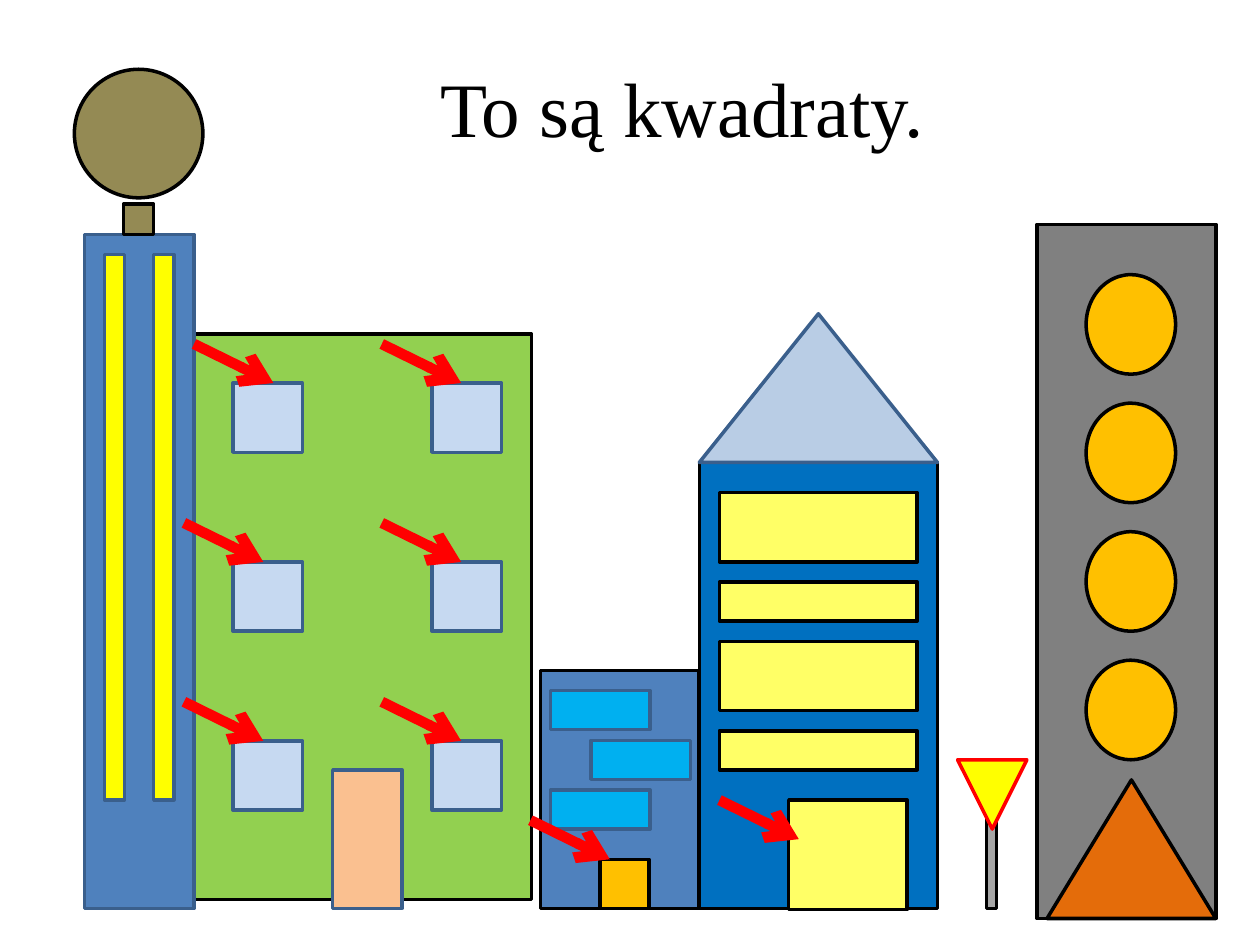
from dataclasses import dataclass

from lxml.etree import SubElement
from pptx import Presentation
from pptx.dml.color import RGBColor
from pptx.enum.shapes import MSO_CONNECTOR, MSO_SHAPE
from pptx.enum.text import MSO_ANCHOR, PP_ALIGN
from pptx.oxml.ns import qn
from pptx.util import Inches, Pt

RECT = MSO_SHAPE.RECTANGLE
OVAL = MSO_SHAPE.OVAL
TRIANGLE = MSO_SHAPE.ISOSCELES_TRIANGLE


@dataclass(frozen=True)
class Theme:
    font: str = "Times New Roman"
    title_size: int = 44
    outline_width: int = 2
    arrow_width: int = 6
    black: str = "000000"
    navy: str = "3A5F8C"
    red: str = "FF0000"
    green: str = "92D050"
    blue: str = "0070C0"
    steel: str = "4F81BD"
    cyan: str = "00B0F0"
    glass: str = "C6D9F1"
    roof: str = "B9CDE5"
    peach: str = "FAC090"
    cream: str = "FFFF66"
    yellow: str = "FFFF00"
    amber: str = "FFC000"
    orange: str = "E46C0A"
    olive: str = "948A54"
    gray: str = "808080"
    light_gray: str = "A6A6A6"


class Street:
    """Draws on one slide with one theme; lengths are in inches."""

    def __init__(self, slide, theme):
        self.slide = slide
        self.theme = theme

    def title(self, text, left, top, width, height):
        box = self.slide.shapes.title
        box.left, box.top = Inches(left), Inches(top)
        box.width, box.height = Inches(width), Inches(height)
        frame = box.text_frame
        frame.text = text
        frame.vertical_anchor = MSO_ANCHOR.MIDDLE
        para = frame.paragraphs[0]
        para.alignment = PP_ALIGN.CENTER
        font = para.runs[0].font
        font.name = self.theme.font
        font.size = Pt(self.theme.title_size)
        font.color.rgb = RGBColor.from_string(self.theme.black)

    def shape(self, kind, left, top, width, height, fill, outline):
        shape = self.slide.shapes.add_shape(
            kind, Inches(left), Inches(top), Inches(width), Inches(height))
        shape.shadow.inherit = False
        shape.fill.solid()
        shape.fill.fore_color.rgb = RGBColor.from_string(fill)
        shape.line.color.rgb = RGBColor.from_string(outline)
        shape.line.width = Pt(self.theme.outline_width)
        return shape

    def arrow(self, left, top):
        """Short slanted arrow; every arrow has the same length and slope."""
        arrow = self.slide.shapes.add_connector(
            MSO_CONNECTOR.STRAIGHT, Inches(left), Inches(top),
            Inches(left + 0.63), Inches(top + 0.31))
        arrow.line.color.rgb = RGBColor.from_string(self.theme.red)
        arrow.line.width = Pt(self.theme.arrow_width)
        SubElement(arrow.line._get_or_add_ln(), qn("a:tailEnd"), type="arrow")
        SubElement(arrow._element.spPr, qn("a:effectLst"))


def draw_green_block(street):
    theme = street.theme
    street.shape(RECT, 1.46, 2.65, 2.76, 4.49, theme.green, theme.black)
    for row in range(3):
        for left in (1.85, 3.43):
            street.shape(RECT, left, 3.04 + 1.42 * row, 0.55, 0.55, theme.glass, theme.navy)
    street.shape(RECT, 2.64, 6.11, 0.55, 1.1, theme.peach, theme.navy)


def draw_blue_house(street):
    theme = street.theme
    street.shape(RECT, 5.55, 3.67, 1.89, 3.54, theme.blue, theme.black)
    street.shape(TRIANGLE, 5.55, 2.49, 1.89, 1.18, theme.roof, theme.navy)
    for top in (3.91, 5.09):
        street.shape(RECT, 5.71, top, 1.57, 0.55, theme.cream, theme.black)
        street.shape(RECT, 5.71, top + 0.71, 1.57, 0.31, theme.cream, theme.black)
    street.shape(RECT, 6.26, 6.35, 0.94, 0.87, theme.cream, theme.black)


def draw_globe_tower(street):
    theme = street.theme
    street.shape(RECT, 0.67, 1.86, 0.87, 5.35, theme.steel, theme.navy)
    street.shape(OVAL, 0.59, 0.55, 1.02, 1.02, theme.olive, theme.black)
    street.shape(RECT, 0.98, 1.62, 0.24, 0.24, theme.olive, theme.black)
    for left in (0.83, 1.22):
        street.shape(RECT, left, 2.02, 0.16, 4.33, theme.yellow, theme.navy)


def draw_small_house(street):
    theme = street.theme
    street.shape(RECT, 4.29, 5.32, 1.26, 1.89, theme.steel, theme.black)
    for row, left in enumerate((4.37, 4.69, 4.37)):
        street.shape(RECT, left, 5.48 + 0.395 * row, 0.79, 0.31, theme.cyan, theme.navy)
    street.shape(RECT, 4.76, 6.82, 0.39, 0.39, theme.amber, theme.black)


def draw_road_sign(street):
    theme = street.theme
    street.shape(RECT, 7.83, 6.19, 0.08, 1.02, theme.light_gray, theme.black)
    sign = street.shape(TRIANGLE, 7.6, 6.03, 0.55, 0.55, theme.yellow, theme.red)
    sign.rotation = 180


def draw_gray_tower(street):
    theme = street.theme
    street.shape(RECT, 8.23, 1.78, 1.42, 5.51, theme.gray, theme.black)
    for row in range(4):
        street.shape(OVAL, 8.62, 2.18 + 1.02 * row, 0.71, 0.79, theme.amber, theme.black)
    street.shape(TRIANGLE, 8.31, 6.19, 1.34, 1.1, theme.orange, theme.black)


def point_at_squares(street):
    for row, left in enumerate((1.54, 1.46, 1.46)):
        top = 2.73 + 1.42 * row
        street.arrow(left, top)
        street.arrow(3.03, top)
    street.arrow(4.21, 6.51)
    street.arrow(5.71, 6.35)


def main():
    deck = Presentation()
    deck.slide_width, deck.slide_height = Inches(10), Inches(7.5)
    slide = deck.slides.add_slide(deck.slide_layouts[0])
    subtitle = slide.placeholders[1].element
    subtitle.getparent().remove(subtitle)

    street = Street(slide, Theme())
    street.title("To są kwadraty.", 0.83, 0, 9.17, 1.7)
    draw_green_block(street)
    draw_blue_house(street)
    draw_small_house(street)
    draw_globe_tower(street)
    draw_road_sign(street)
    draw_gray_tower(street)
    point_at_squares(street)
    deck.save("out.pptx")


if __name__ == "__main__":
    main()
